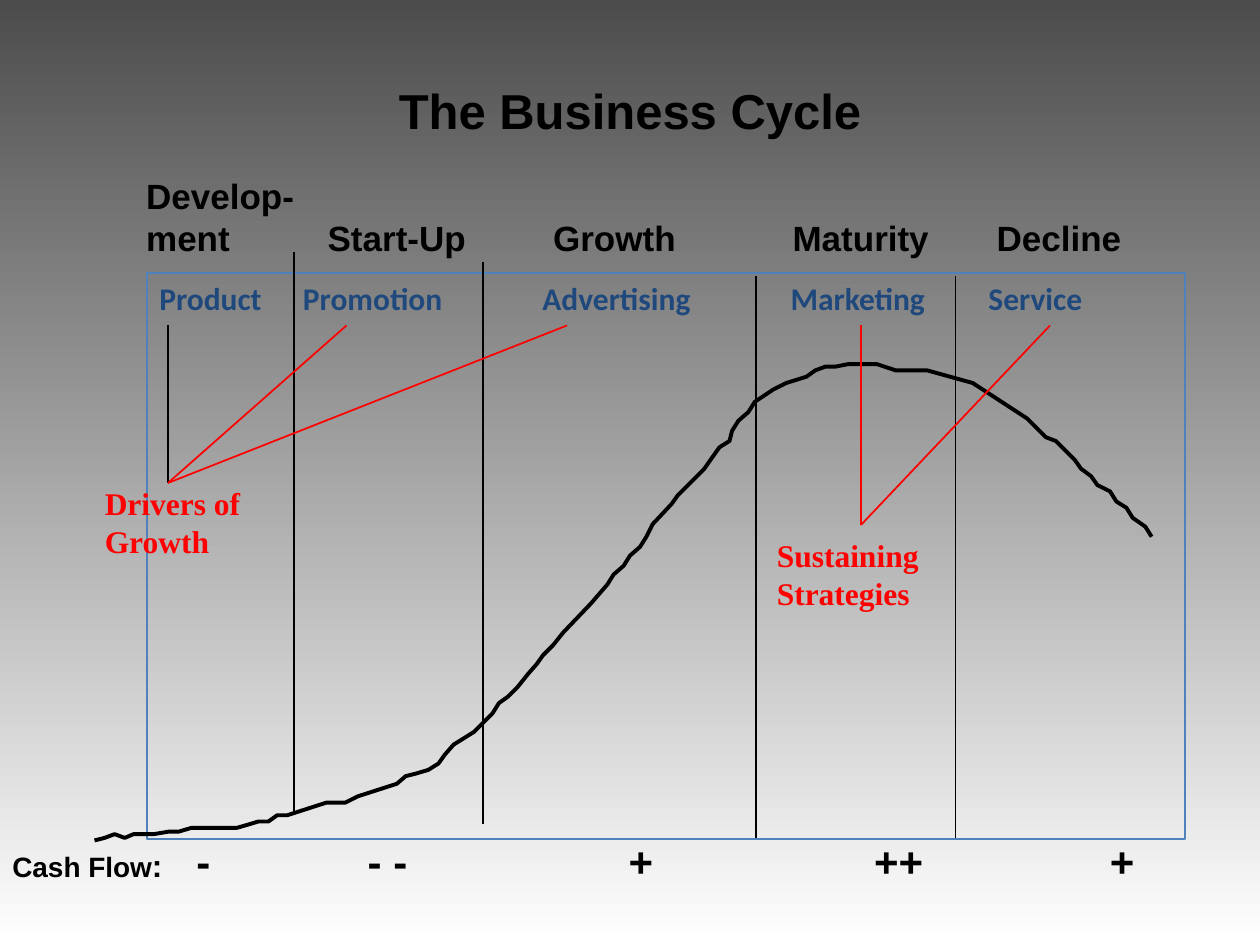
from dataclasses import dataclass

import pptx
import pptx.dml.color
import pptx.enum.shapes
import pptx.enum.text
import pptx.oxml.ns
import pptx.util
from lxml import etree

CELL = 1 / 12  # inches; the slide is a grid of 120 columns by 90 rows
COLORS = {"ink": "000000", "drive": "FF0000", "label": "1F497D",
          "frame": "4F81BD", "top": "4C4C4C", "bottom": "FFFFFF"}

# Curve in hundredths of an inch
CURVE = [
    (75, 667), (83, 665), (91, 662), (99, 665), (106, 662), (122, 662),
    (134, 660), (142, 660), (152, 657), (188, 657), (195, 655), (205, 652),
    (213, 652), (220, 647), (228, 647), (259, 637), (274, 637), (284, 632),
    (315, 622), (322, 616), (330, 614), (340, 611), (348, 606), (353, 599),
    (360, 591), (376, 581), (391, 566), (396, 558), (403, 553), (411, 545),
    (419, 535), (426, 527), (431, 520), (439, 512), (447, 502), (469, 479),
    (475, 472), (482, 464), (487, 456), (495, 449), (500, 441), (508, 434),
    (513, 426), (518, 416), (533, 400), (538, 393), (559, 372), (566, 362),
    (571, 355), (579, 350), (581, 342), (586, 334), (594, 327), (599, 319),
    (614, 309), (624, 304), (640, 299), (647, 294), (655, 291), (663, 291),
    (673, 289), (696, 289), (711, 294), (736, 294), (754, 299), (772, 304),
    (795, 319), (815, 332), (830, 347), (838, 350), (853, 365), (858, 372),
    (866, 378), (871, 385), (881, 390), (886, 398), (894, 403), (899, 411),
    (909, 418), (914, 426)]


@dataclass
class Piece:
    text: str
    size: float


@dataclass
class Label:
    """Text box on the grid; tabs are in inches from the text's left edge."""
    col: float
    row: float
    cols: float
    rows: float
    lines: list[list[Piece]]
    font: str = "Arial"
    color: str = "ink"
    tabs: tuple[float, ...] = ()
    inset: float = 0.1
    centered: bool = False


@dataclass
class Line:
    col1: float
    row1: float
    col2: float
    row2: float
    color: str = "ink"


LABELS = [
    Label(9, 3, 102, 15, [[Piece("The Business Cycle", 28)]], centered=True),
    Label(14, 26, 98.9, 53.9,
          [[Piece("Product\tPromotion\tAdvertising\tMarketing\tService", 18)]],
          "Calibri", "label", (1.14, 3.04, 5.01, 6.58)),
    Label(9, 16, 110, 9.1,
          [[Piece("Develop-", 20)],
           [Piece("ment\tStart-Up\tGrowth\tMaturity\tDecline", 20)]],
          tabs=(1.44, 3.23, 5.13, 6.75), inset=0.41),
    Label(0, 79, 110.2, 6,
          [[Piece("Cash Flow", 16), Piece(":", 18),
            Piece("\t-\t- -\t+\t++\t+", 24)]],
          tabs=(1.46, 2.82, 4.89, 6.84, 8.71)),
    Label(8.8, 45.5, 15.4, 8.4,
          [[Piece("Drivers of", 18)], [Piece("Growth", 18)]],
          "Times New Roman", "drive"),
    Label(72.8, 50.5, 16, 8.4,
          [[Piece("Sustaining", 18)], [Piece("Strategies", 18)]],
          "Times New Roman", "drive"),
]

DIVIDERS = [Line(col, row, col, row + 53.5)
            for col, row in ((46, 25), (28, 24), (72, 26.3), (91, 26.3))]
DRIVERS = [Line(col, 31, 16, 46, color)
           for col, color in ((16, "ink"), (33, "drive"), (54, "drive"))]
SUSTAINERS = [Line(col, 31, 82, 50, "drive") for col in (82, 100)]


def grid(n: float) -> int:
    return pptx.util.Inches(n * CELL)


def rgb(name: str) -> pptx.dml.color.RGBColor:
    return pptx.dml.color.RGBColor.from_string(COLORS[name])


def set_tabs(p, stops: tuple[float, ...]) -> None:
    tabs = etree.SubElement(p._p.get_or_add_pPr(), pptx.oxml.ns.qn("a:tabLst"))
    for stop in stops:
        etree.SubElement(tabs, pptx.oxml.ns.qn("a:tab"),
                         pos=str(pptx.util.Inches(stop)), algn="l")


def add_label(slide, label: Label) -> None:
    sp = slide.shapes.add_textbox(grid(label.col), grid(label.row),
                                  grid(label.cols), grid(label.rows))
    tf = sp.text_frame
    tf.word_wrap = True
    tf.margin_left = pptx.util.Inches(label.inset)
    if label.centered:
        tf.vertical_anchor = pptx.enum.text.MSO_ANCHOR.MIDDLE
    for i, line in enumerate(label.lines):
        p = tf.add_paragraph() if i else tf.paragraphs[0]
        if label.centered:
            p.alignment = pptx.enum.text.PP_ALIGN.CENTER
        if label.tabs:
            set_tabs(p, label.tabs)
        for piece in line:
            r = p.add_run()
            r.text = piece.text
            r.font.name = label.font
            r.font.size = pptx.util.Pt(piece.size)
            r.font.bold = True
            r.font.color.rgb = rgb(label.color)


def add_line(slide, line: Line) -> None:
    cn = slide.shapes.add_connector(
        pptx.enum.shapes.MSO_CONNECTOR.STRAIGHT, grid(line.col1),
        grid(line.row1), grid(line.col2), grid(line.row2))
    cn.line.color.rgb = rgb(line.color)
    cn.line.width = pptx.util.Pt(1)
    etree.SubElement(cn._element.spPr, pptx.oxml.ns.qn("a:effectLst"))


def outline(sp, color: str, width: float) -> None:
    """Leave only a coloured line on the shape."""
    sp.shadow.inherit = False
    sp.fill.background()
    sp.line.color.rgb = rgb(color)
    sp.line.width = pptx.util.Pt(width)


def add_frame(slide) -> None:
    sp = slide.shapes.add_shape(pptx.enum.shapes.MSO_SHAPE.RECTANGLE,
                                grid(14), grid(26), grid(98.9), grid(53.9))
    outline(sp, "frame", 1)


def add_curve(slide) -> None:
    fb = slide.shapes.build_freeform(*CURVE[0], scale=pptx.util.Inches(0.01))
    fb.add_line_segments(CURVE[1:], close=False)
    outline(fb.convert_to_shape(), "ink", 2.25)


def set_background(slide) -> None:
    fill = slide.background.fill
    fill.gradient()
    fill.gradient_angle = 270
    for stop, name, position in zip(fill.gradient_stops, ("top", "bottom"), (0, 1)):
        stop.color.rgb = rgb(name)
        stop.position = position


def main() -> None:
    prs = pptx.Presentation()
    prs.slide_width, prs.slide_height = grid(120), grid(90)
    s = prs.slides.add_slide(prs.slide_layouts[6])
    set_background(s)
    add_frame(s)
    for line in DIVIDERS:
        add_line(s, line)
    add_curve(s)
    for label in LABELS:
        add_label(s, label)
    for line in DRIVERS + SUSTAINERS:
        add_line(s, line)
    prs.save("out.pptx")


if __name__ == "__main__":
    main()
